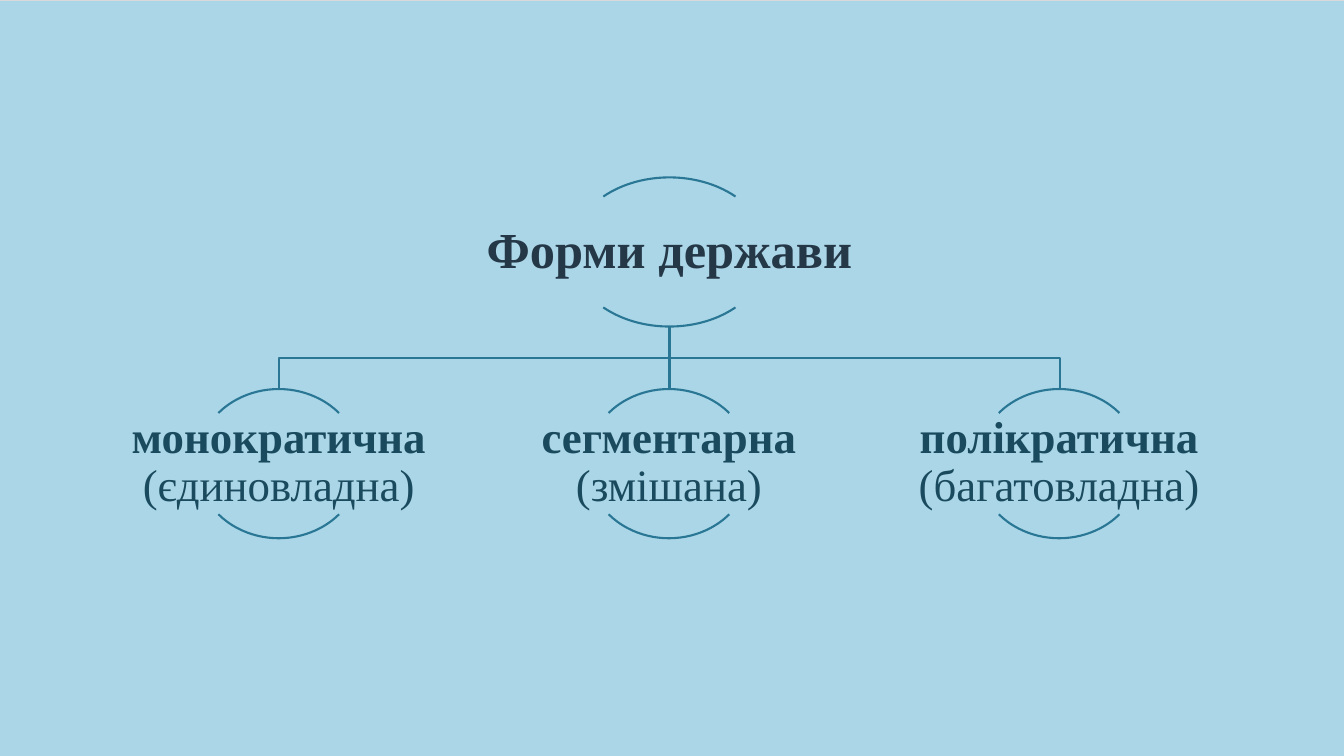
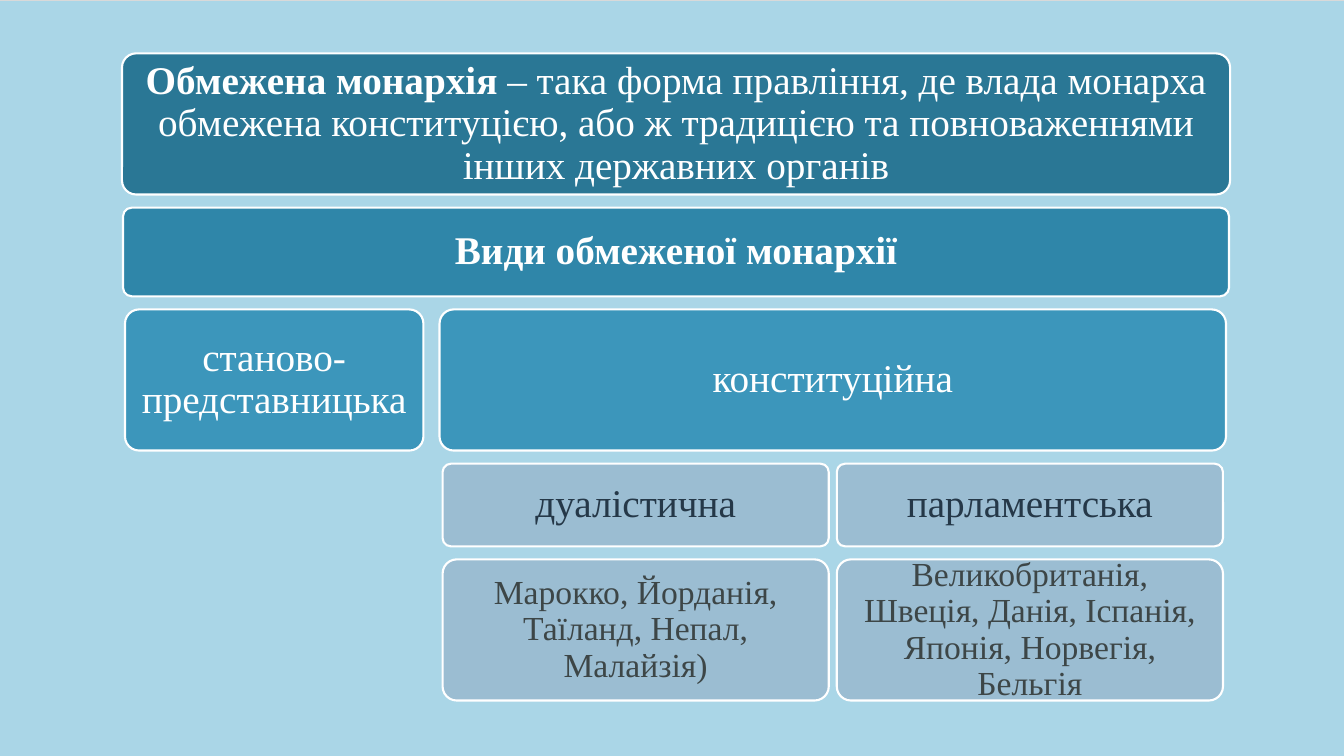
from dataclasses import dataclass
from itertools import accumulate

from lxml.etree import SubElement
from pptx import Presentation
from pptx.dml.color import RGBColor
from pptx.enum.dml import MSO_PATTERN
from pptx.enum.shapes import MSO_CONNECTOR, MSO_SHAPE
from pptx.enum.text import MSO_ANCHOR, MSO_AUTO_SIZE, PP_ALIGN
from pptx.oxml.ns import qn
from pptx.util import Pt

EMU_PER_PX = 9144  # 100 px to the inch
TITLE_ONLY_LAYOUT = 5


def px(length):
    return length * EMU_PER_PX


@dataclass(frozen=True)
class Theme:
    font: str = "Times New Roman"
    background: str = "AAD6E7"
    background_stripe: str = "D9D9D9"
    deep: str = "2A7795"
    medium: str = "2F86A9"
    bright: str = "3C96BB"
    pale: str = "9BBDD2"
    white: str = "FFFFFF"
    navy: str = "253848"
    teal: str = "1A4A5D"
    grey: str = "3D4647"
    root_size: int = 36
    branch_size: int = 32
    box_size: int = 28
    example_size: int = 24
    line_width: float = 1.5
    line_spacing: float = 0.9
    corner: float = 0.1


def set_text(shape, runs, *, font, size, color, inset, spacing):
    """Fill a shape with one centred paragraph of (text, bold) runs."""
    frame = shape.text_frame
    frame.word_wrap = True
    frame.auto_size = MSO_AUTO_SIZE.NONE
    frame.vertical_anchor = MSO_ANCHOR.MIDDLE
    frame.margin_left = frame.margin_right = px(inset)
    frame.margin_top = frame.margin_bottom = px(inset)
    paragraph = frame.paragraphs[0]
    paragraph.alignment = PP_ALIGN.CENTER
    paragraph.line_spacing = spacing
    for text, bold in runs:
        run = paragraph.add_run()
        run.text = text
        run.font.name = font
        run.font.size = Pt(size)
        run.font.bold = bold
        run.font.color.rgb = RGBColor.from_string(color)


class Deck:
    def __init__(self, theme):
        self.theme = theme
        self.slide = None
        self.presentation = Presentation()
        self.presentation.slide_width = px(1333)
        self.presentation.slide_height = px(750)
        # Shared striped background
        fill = self.presentation.slide_master.background.fill
        fill.patterned()
        fill.pattern = MSO_PATTERN.DARK_HORIZONTAL
        fill.fore_color.rgb = RGBColor.from_string(theme.background)
        fill.back_color.rgb = RGBColor.from_string(theme.background_stripe)

    def new_slide(self):
        layout = self.presentation.slide_layouts[TITLE_ONLY_LAYOUT]
        self.slide = self.presentation.slides.add_slide(layout)

    def style_text(self, shape, runs, size, color, inset):
        set_text(shape, runs, font=self.theme.font, size=size, color=color,
                 inset=inset, spacing=self.theme.line_spacing)

    def outline(self, shape, color):
        shape.line.color.rgb = RGBColor.from_string(color)
        shape.line.width = Pt(self.theme.line_width)

    def title(self, area, runs, size, color, inset):
        heading = self.slide.shapes.title
        heading.left, heading.top, heading.width, heading.height = map(px, area)
        self.style_text(heading, runs, size, color, inset)
        # Keep the heading in front of the panel it sits on
        element = heading._element
        element.getparent().append(element)

    def label(self, area, runs, size, color, inset):
        textbox = self.slide.shapes.add_textbox(*map(px, area))
        self.style_text(textbox, runs, size, color, inset)

    def box(self, area, fill, runs=(), size=None, color=None, inset=12):
        panel = self.slide.shapes.add_shape(
            MSO_SHAPE.ROUNDED_RECTANGLE, *map(px, area))
        panel.shadow.inherit = False
        panel.adjustments[0] = self.theme.corner
        panel.fill.solid()
        panel.fill.fore_color.rgb = RGBColor.from_string(fill)
        self.outline(panel, self.theme.white)
        if runs:
            self.style_text(panel, runs, size or self.theme.box_size,
                            color or self.theme.white, inset)

    def arc_pair(self, area):
        for start, end in ((220, 320), (40, 140)):
            arc = self.slide.shapes.add_shape(MSO_SHAPE.ARC, *map(px, area))
            arc.shadow.inherit = False
            # Angles are stored as 60000ths of a degree, adjustments as 100000ths
            arc.adjustments[0] = start * 0.6
            arc.adjustments[1] = end * 0.6
            arc.fill.background()
            self.outline(arc, self.theme.deep)

    def line(self, start, end):
        connector = self.slide.shapes.add_connector(
            MSO_CONNECTOR.STRAIGHT, *map(px, start + end))
        self.outline(connector, self.theme.deep)
        SubElement(connector._element.spPr, qn("a:effectLst"))

    def elbow(self, start, end):
        middle = (start[1] + end[1]) // 2
        builder = self.slide.shapes.build_freeform(*start, scale=EMU_PER_PX)
        builder.add_line_segments(
            [(start[0], middle), (end[0], middle), end], close=False)
        bend = builder.convert_to_shape()
        bend.shadow.inherit = False
        bend.fill.background()
        self.outline(bend, self.theme.deep)


def build_state_forms(deck):
    theme = deck.theme
    deck.new_slide()
    root_x, root_bottom, branch_top, arc_height = 664, 324, 386, 148
    branches = (
        ("монократична", "(єдиновладна)"),
        ("сегментарна", "(змішана)"),
        ("полікратична", "(багатовладна)"),
    )
    centers = [root_x + step * 387 for step in (-1, 0, 1)]

    # Links from the root to its branches
    for center in centers:
        link = deck.line if center == root_x else deck.elbow
        link((root_x, root_bottom), (center, branch_top))

    # Root
    deck.arc_pair((root_x - 98, root_bottom - arc_height, 196, arc_height))
    deck.title((root_x - 196, 203, 392, 95), [("Форми держави", True)],
               theme.root_size, theme.navy, 3)

    # Branches
    for center, (form, meaning) in zip(centers, branches):
        deck.arc_pair((center - 82, branch_top, 163, arc_height))
        deck.label((center - 163, 412, 325, 95),
                   [(form, True), (f" {meaning}", False)],
                   theme.branch_size, theme.teal, 2)


def build_limited_monarchy(deck):
    theme = deck.theme
    deck.new_slide()
    gap = 13
    heights = (140, 88, 140, 82, 140)
    tops = accumulate((height + gap for height in heights[:-1]), initial=53)
    definition, kinds, types, subtypes, examples = zip(tops, heights)

    def cell(left, width, row):
        top, height = row
        return left, top, width, height

    # Definition
    deck.box(cell(121, 1099, definition), theme.deep)
    deck.title((125, 57, 1091, 132), [
        ("Обмежена монархія ", True),
        ("– така форма правління, де влада монарха обмежена конституцією, "
         "або ж традицією та повноваженнями інших державних органів", False),
    ], theme.box_size, theme.white, 12)

    # Kinds and types
    deck.box(cell(122, 1097, kinds), theme.medium,
             [("Види обмеженої монархії", True)])
    deck.box(cell(124, 296, types), theme.bright,
             [("станово-представницька", False)])
    deck.box(cell(436, 780, types), theme.bright, [("конституційна", False)])

    # Constitutional subtypes with their countries
    columns = (
        ("дуалістична", "Марокко, Йорданія, Таїланд, Непал, Малайзія)"),
        ("парламентська", "Великобританія, Швеція, Данія, Іспанія, "
                          "Японія, Норвегія, Бельгія"),
    )
    for index, (subtype, countries) in enumerate(columns):
        left = 439 + index * 391
        deck.box(cell(left, 383, subtypes), theme.pale,
                 [(subtype, False)], color=theme.navy)
        deck.box(cell(left, 383, examples), theme.pale, [(countries, False)],
                 size=theme.example_size, color=theme.grey, inset=10)


def main():
    deck = Deck(Theme())
    build_state_forms(deck)
    build_limited_monarchy(deck)
    deck.presentation.save("out.pptx")


if __name__ == "__main__":
    main()
